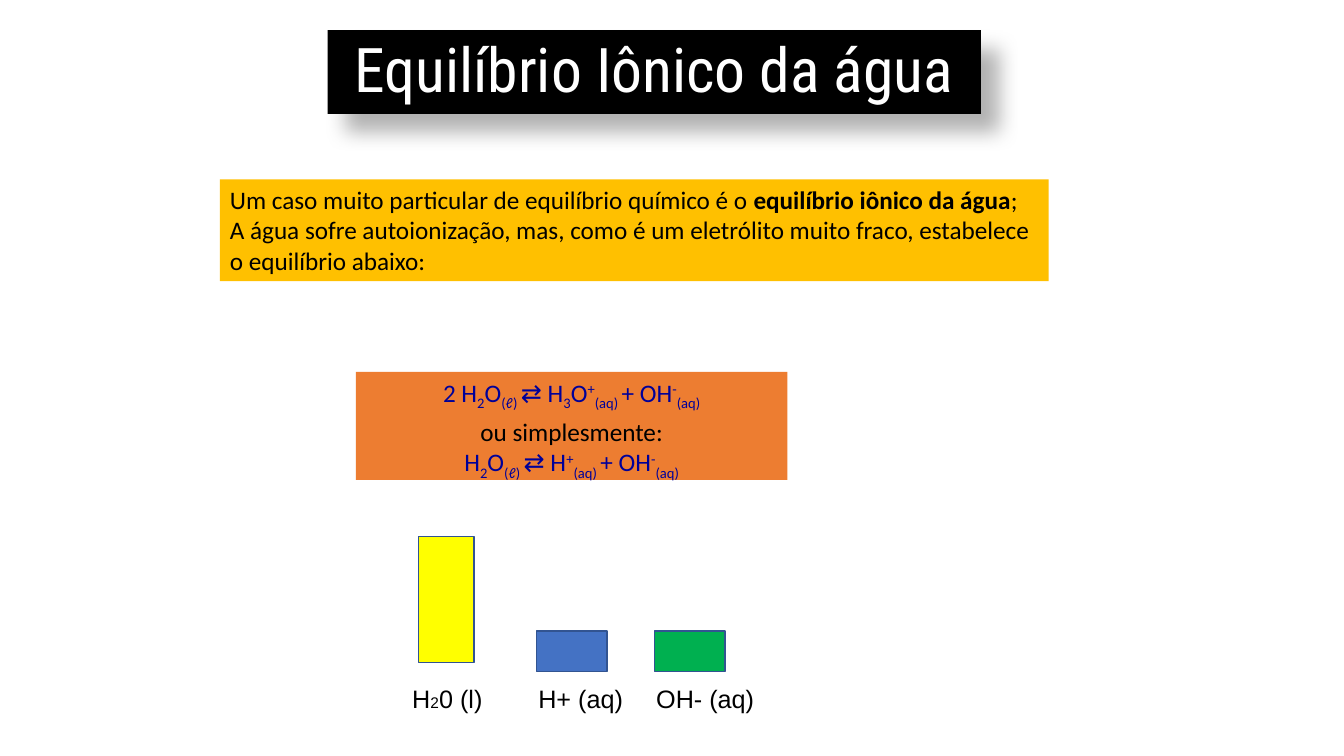
from dataclasses import dataclass

from lxml.etree import SubElement
from pptx import Presentation
from pptx.dml.color import RGBColor
from pptx.enum.shapes import MSO_SHAPE
from pptx.enum.text import MSO_ANCHOR, MSO_AUTO_SIZE, PP_ALIGN
from pptx.oxml.ns import qn
from pptx.util import Inches, Pt

SUB, BASE, SUP = -25000, 0, 30000

TITLE = "Equilíbrio Iônico da água"
INTRO = [
    [("Um caso muito particular de equilíbrio químico é o ", False),
     ("equilíbrio iônico da água", True), (";", False)],
    [("A água sofre autoionização, mas, como é um eletrólito muito fraco, "
      "estabelece o equilíbrio abaixo:", False)],
]
WATER = [("H", BASE), ("2", SUB), ("O", BASE), ("(ℓ) ", SUB), ("⇄ H", BASE)]
IONS = [("+", SUP), ("(aq) ", SUB), ("+ OH", BASE), ("-", SUP), ("(aq)", SUB)]
EQUATIONS = [
    ([("2 ", BASE)] + WATER + [("3", SUB), ("O", BASE)] + IONS, "equation", 3.6),
    ([("ou simplesmente:", BASE)], "text", 0),
    (WATER + IONS, "equation", 0),
]
BARS = [
    ("water", (4.15, 5.32, 0.55, 1.25)),
    ("proton", (5.32, 6.26, 0.7, 0.4)),
    ("hydroxide", (6.49, 6.26, 0.7, 0.4)),
]
LABELS = [
    (3.99, 0.91, [("H", "body"), ("2", "small"), ("0 (l)", "body")]),
    (5.24, 1.05, [("H+ (aq)", "body")]),
    (6.41, 1.18, [("OH- (aq)", "body")]),
]
LABEL_TOP, LABEL_HEIGHT = 6.73, 0.4


@dataclass(frozen=True)
class Theme:
    title_font: str = "Roboto Condensed"
    body_font: str = "Calibri"
    label_font: str = "Arial"
    title_size: int = 44
    body: int = 18
    small: int = 11
    title_fill: str = "000000"
    title_text: str = "FFFFFF"
    intro_fill: str = "FFC000"
    equation_fill: str = "ED7D31"
    text: str = "000000"
    equation: str = "000099"
    water: str = "FFFF00"
    proton: str = "4472C4"
    hydroxide: str = "00B050"
    outline: str = "325491"


THEME = Theme()


def rgb(name):
    return RGBColor.from_string(getattr(THEME, name))


def place(s, left, top, width, height):
    s.left, s.top = Inches(left), Inches(top)
    s.width, s.height = Inches(width), Inches(height)


def paint(s, color):
    s.fill.solid()
    s.fill.fore_color.rgb = rgb(color)
    s.shadow.inherit = False


def add_run(p, text, font, size, color="text"):
    r = p.add_run()
    r.text = text
    r.font.name = font
    r.font.size = Pt(size)
    r.font.color.rgb = rgb(color)
    return r


def paragraphs(tf, rows):
    for i, row in enumerate(rows):
        yield (tf.add_paragraph() if i else tf.paragraphs[0]), row


def add_title(slide):
    s = slide.shapes.title
    place(s, 3.25, 0.3, 6.48, 0.83)
    paint(s, "title_fill")
    shadow = SubElement(s._element.spPr.find(qn("a:effectLst")), qn("a:outerShdw"),
                        blurRad=str(Pt(15)), dist=str(Pt(18)), dir="2700000",
                        algn="tl", rotWithShape="0")
    color = SubElement(shadow, qn("a:srgbClr"), val=THEME.title_fill)
    SubElement(color, qn("a:alpha"), val="30000")
    tf = s.text_frame
    tf.auto_size = MSO_AUTO_SIZE.NONE
    tf.vertical_anchor = MSO_ANCHOR.MIDDLE
    p = tf.paragraphs[0]
    p.alignment, p.line_spacing = PP_ALIGN.CENTER, 0.9
    add_run(p, TITLE, THEME.title_font, THEME.title_size, "title_text")


def add_intro(slide):
    s = slide.placeholders[1]
    place(s, 2.18, 1.78, 8.22, 1.01)
    paint(s, "intro_fill")
    tf = s.text_frame
    tf.auto_size = MSO_AUTO_SIZE.NONE
    tf.vertical_anchor = MSO_ANCHOR.TOP
    for p, row in paragraphs(tf, INTRO):
        p.space_before = Pt(0)
        pPr = p._p.get_or_add_pPr()
        pPr.set("marL", "0")
        pPr.set("indent", "0")
        SubElement(pPr, qn("a:buNone"))
        for text, bold in row:
            add_run(p, text, THEME.body_font, THEME.body).font.bold = bold


def add_equations(slide):
    s = slide.shapes.add_textbox(*map(Inches, (3.53, 3.69, 4.28, 1.07)))
    paint(s, "equation_fill")
    tf = s.text_frame
    tf.word_wrap = True
    for p, (runs, color, after) in paragraphs(tf, EQUATIONS):
        p.alignment, p.space_after = PP_ALIGN.CENTER, Pt(after)
        for text, baseline in runs:
            r = add_run(p, text, THEME.body_font, THEME.body, color)
            r.font._element.set("baseline", str(baseline))


def add_bars(slide):
    for color, box in BARS:
        s = slide.shapes.add_shape(MSO_SHAPE.RECTANGLE, *map(Inches, box))
        paint(s, color)
        s.line.color.rgb = rgb("outline")
        s.line.width = Pt(1)
    for left, width, runs in LABELS:
        s = slide.shapes.add_textbox(*map(Inches, (left, LABEL_TOP, width, LABEL_HEIGHT)))
        s.text_frame.word_wrap = False
        for text, size in runs:
            add_run(s.text_frame.paragraphs[0], text, THEME.label_font, getattr(THEME, size))


def main():
    """Build the slide on the ionic equilibrium of water."""
    prs = Presentation()
    prs.slide_width, prs.slide_height = Inches(13.33), Inches(7.5)
    slide = prs.slides.add_slide(prs.slide_layouts[1])
    add_title(slide)
    add_intro(slide)
    add_equations(slide)
    add_bars(slide)
    prs.save("out.pptx")


if __name__ == "__main__":
    main()
